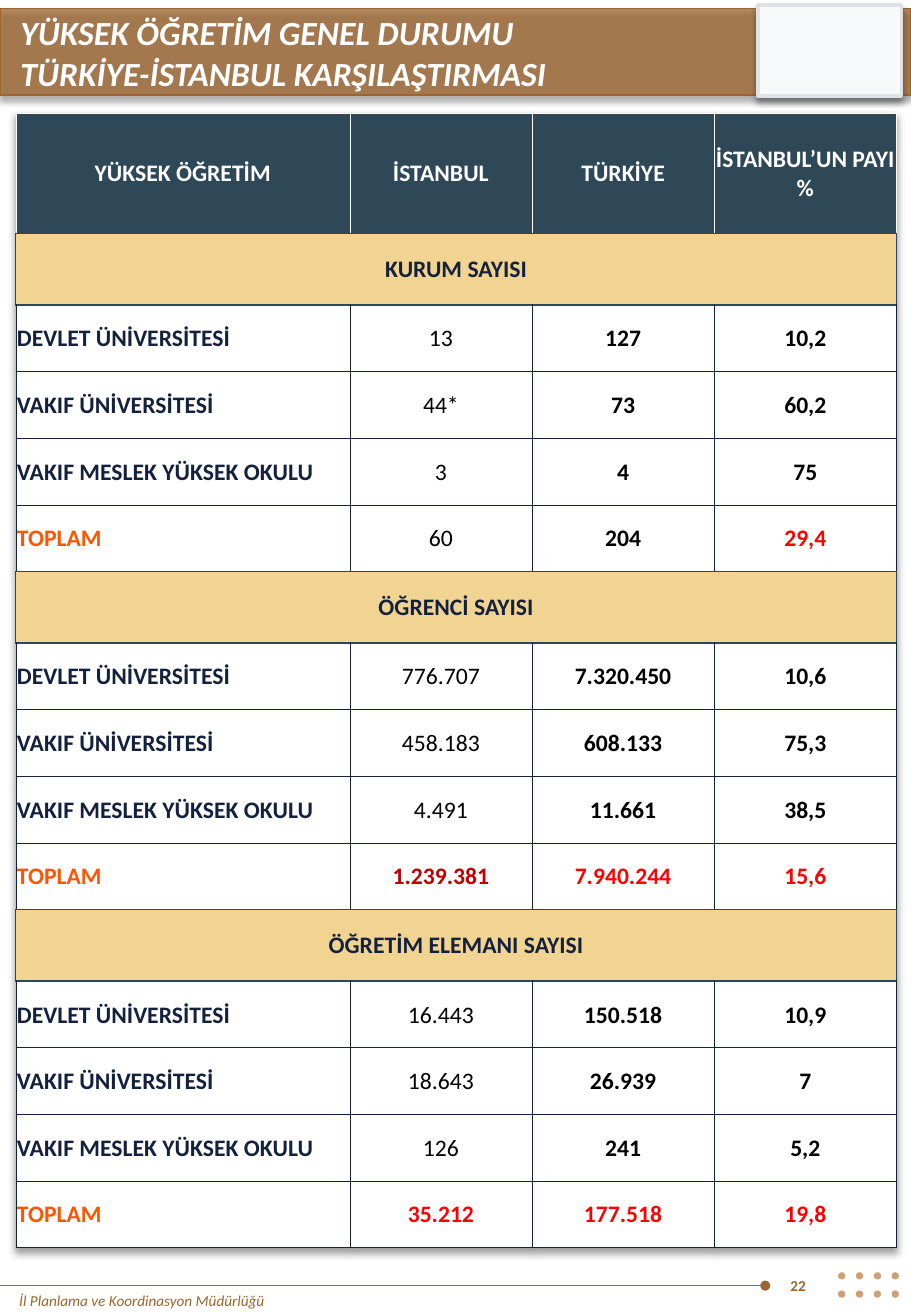
from lxml.etree import SubElement
from pptx import Presentation
from pptx.dml.color import RGBColor
from pptx.enum.shapes import MSO_CONNECTOR as CONN, MSO_SHAPE as SHAPE
from pptx.enum.text import MSO_ANCHOR as ANCHOR, PP_ALIGN as ALIGN
from pptx.oxml import parse_xml
from pptx.oxml.ns import nsdecls, qn
from pptx.util import Inches, Pt

W, H = 7.5, 10.83
BROWN, NAVY, TEAL, SAND = "9E652E", "14213D", "2F4858", "F2D492"
WHITE, BLACK, RED, ORANGE = "FFFFFF", "000000", "FF0000", "FF5400"
SHADOW = (
    f'<a:effectLst {nsdecls("a")}><a:outerShdw blurRad="50800" dist="38100" dir="5400000" '
    'algn="t" rotWithShape="0"><a:srgbClr val="000000"><a:alpha val="40000"/>'
    '</a:srgbClr></a:outerShdw></a:effectLst>'
)


def rgb(c):
    return RGBColor.from_string(c)


def add_run(p, text, size, c, bold=False, italic=False):
    r = p.add_run()
    r.text = text
    f = r.font
    f.name, f.size, f.bold, f.italic = "Calibri", Pt(size), bold, italic
    f.color.rgb = rgb(c)


prs = Presentation()
prs.slide_width, prs.slide_height = Inches(W), Inches(H)
s = prs.slides.add_slide(prs.slide_layouts[6])

for x, y, w, h, fill, line, pt in [
    (0, 0.07, W, 0.71, BROWN, BROWN, 1),
    (6.24, 0.04, 1.18, 0.75, "F8F9FA", "DEE2E6", 2),
]:
    sp = s.shapes.add_shape(SHAPE.RECTANGLE, Inches(x), Inches(y), Inches(w), Inches(h))
    sp.fill.solid()
    sp.fill.fore_color.rgb = rgb(fill)
    sp.line.color.rgb = rgb(line)
    sp.line.width = Pt(pt)
    spPr = sp._element.spPr
    spPr.append(parse_xml(SHADOW))
    if fill == BROWN:
        clr = spPr.find(qn("a:solidFill")).find(qn("a:srgbClr"))
        SubElement(clr, qn("a:alpha")).set("val", "75000")

rule = s.shapes.add_connector(CONN.STRAIGHT, Inches(6.3), Inches(10.58), 0, Inches(10.58))
rule.line.color.rgb = rgb(BROWN)
rule.line.width = Pt(0.5)
SubElement(rule.line._get_or_add_ln(), qn("a:headEnd")).set("type", "oval")
SubElement(rule._element.spPr, qn("a:effectLst"))

for i in range(8):
    row, col = divmod(i, 4)
    dot = s.shapes.add_shape(
        SHAPE.OVAL, Inches(6.9 + col * 0.147), Inches(10.47 + row * 0.15), Inches(0.06), Inches(0.06))
    dot.fill.solid()
    dot.fill.fore_color.rgb = rgb("CDA077")
    dot.line.fill.background()
    dot.shadow.inherit = False

for x, y, w, h, lines, size, c, bold, italic, indent in [
    (0.06, 10.58, 4.69, 0.25, ["İl Planlama ve Koordinasyon Müdürlüğü"], 9, BROWN, False, True, 0),
    (0.07, 0.05, 7.47, 0.77, ["YÜKSEK ÖĞRETİM GENEL DURUMU", "TÜRKİYE-İSTANBUL KARŞILAŞTIRMASI"],
     20, WHITE, True, True, 0.38),
    (6.41, 10.37, 0.5, 0.42, ["22"], 9, BROWN, True, False, 0),
]:
    tf = s.shapes.add_textbox(Inches(x), Inches(y), Inches(w), Inches(h)).text_frame
    tf.word_wrap = True
    tf.vertical_anchor = ANCHOR.MIDDLE if lines == ["22"] else ANCHOR.TOP
    for i, text in enumerate(lines):
        p = tf.add_paragraph() if i else tf.paragraphs[0]
        pPr = p._p.get_or_add_pPr()
        pPr.set("marL", str(Inches(indent)))
        pPr.set("indent", str(-Inches(indent)))
        add_run(p, text, size, c, bold, italic)

LABELS = ["DEVLET ÜNİVERSİTESİ", "VAKIF ÜNİVERSİTESİ", "VAKIF MESLEK YÜKSEK OKULU", "TOPLAM"]
SECTIONS = [
    ("KURUM SAYISI", [BLACK, BLACK, RED],
     [("13", "127", "10,2"), ("44*", "73", "60,2"), ("3", "4", "75"), ("60", "204", "29,4")]),
    ("ÖĞRENCİ SAYISI", ["C00000", RED, RED],
     [("776.707", "7.320.450", "10,6"), ("458.183", "608.133", "75,3"),
      ("4.491", "11.661", "38,5"), ("1.239.381", "7.940.244", "15,6")]),
    ("ÖĞRETİM ELEMANI SAYISI", [RED, RED, RED],
     [("16.443", "150.518", "10,9"), ("18.643", "26.939", "7"),
      ("126", "241", "5,2"), ("35.212", "177.518", "19,8")]),
]
rows = [("head", ["YÜKSEK ÖĞRETİM", "İSTANBUL", "TÜRKİYE", "İSTANBUL’UN PAYI\n%"], [WHITE] * 4)]
for title, total_colors, values in SECTIONS:
    rows.append(("section", [title, "", "", ""], [NAVY] * 4))
    for label, vals in zip(LABELS, values):
        total = label == "TOPLAM"
        colors = [ORANGE, *total_colors] if total else [NAVY, BLACK, BLACK, BLACK]
        rows.append(("data", [label, *vals], colors))

TABLE_H, HEAD_H, SECTION_H = 9.34, 0.99, 0.59
heights = {"head": HEAD_H, "section": SECTION_H, "data": (TABLE_H - HEAD_H - 3 * SECTION_H) / 12}
fills = {"head": TEAL, "section": SAND, "data": WHITE}
thin, thick, pale = (NAVY, 0.25), (TEAL, 1), (WHITE, 0.25)

tbl = s.shapes.add_table(
    len(rows), 4, Inches(0.13), Inches(0.93), Inches(7.25), Inches(TABLE_H)).table
tbl._tbl.tblPr.insert(0, parse_xml(SHADOW))
for col, w in zip(tbl.columns, [2.75, 1.5, 1.5, 1.5]):
    col.width = Inches(w)

for i, (kind, texts, colors) in enumerate(rows):
    tbl.rows[i].height = Inches(heights[kind])
    above = rows[i - 1][0] if i else ""
    below = rows[i + 1][0] if i + 1 < len(rows) else ""
    side = {"head": pale, "section": thick, "data": thin}[kind]
    top = thick if above == "section" else side
    bottom = thick if below == "section" else side
    for j, (text, c) in enumerate(zip(texts, colors)):
        cell = tbl.cell(i, j)
        cell.vertical_anchor = ANCHOR.MIDDLE
        cell.margin_left = cell.margin_right = cell.margin_top = Inches(0.01)
        cell.margin_bottom = 0
        tcPr = cell._tc.get_or_add_tcPr()
        for tag, (color, pt) in zip(("lnL", "lnR", "lnT", "lnB"), (side, side, top, bottom)):
            ln = SubElement(tcPr, qn("a:" + tag), w=str(Pt(pt)))
            SubElement(SubElement(ln, qn("a:solidFill")), qn("a:srgbClr"), val=color)
        cell.fill.solid()
        cell.fill.fore_color.rgb = rgb(fills[kind])
        if not text:
            continue
        for k, part in enumerate(text.split("\n")):
            p = cell.text_frame.add_paragraph() if k else cell.text_frame.paragraphs[0]
            p.alignment = ALIGN.LEFT if kind == "data" and j == 0 else ALIGN.CENTER
            plain = kind == "data" and j == 1 and c == BLACK
            add_run(p, part, 14, c, not plain)
    if kind == "section":
        tbl.cell(i, 0).merge(tbl.cell(i, 3))

prs.save("out.pptx")
